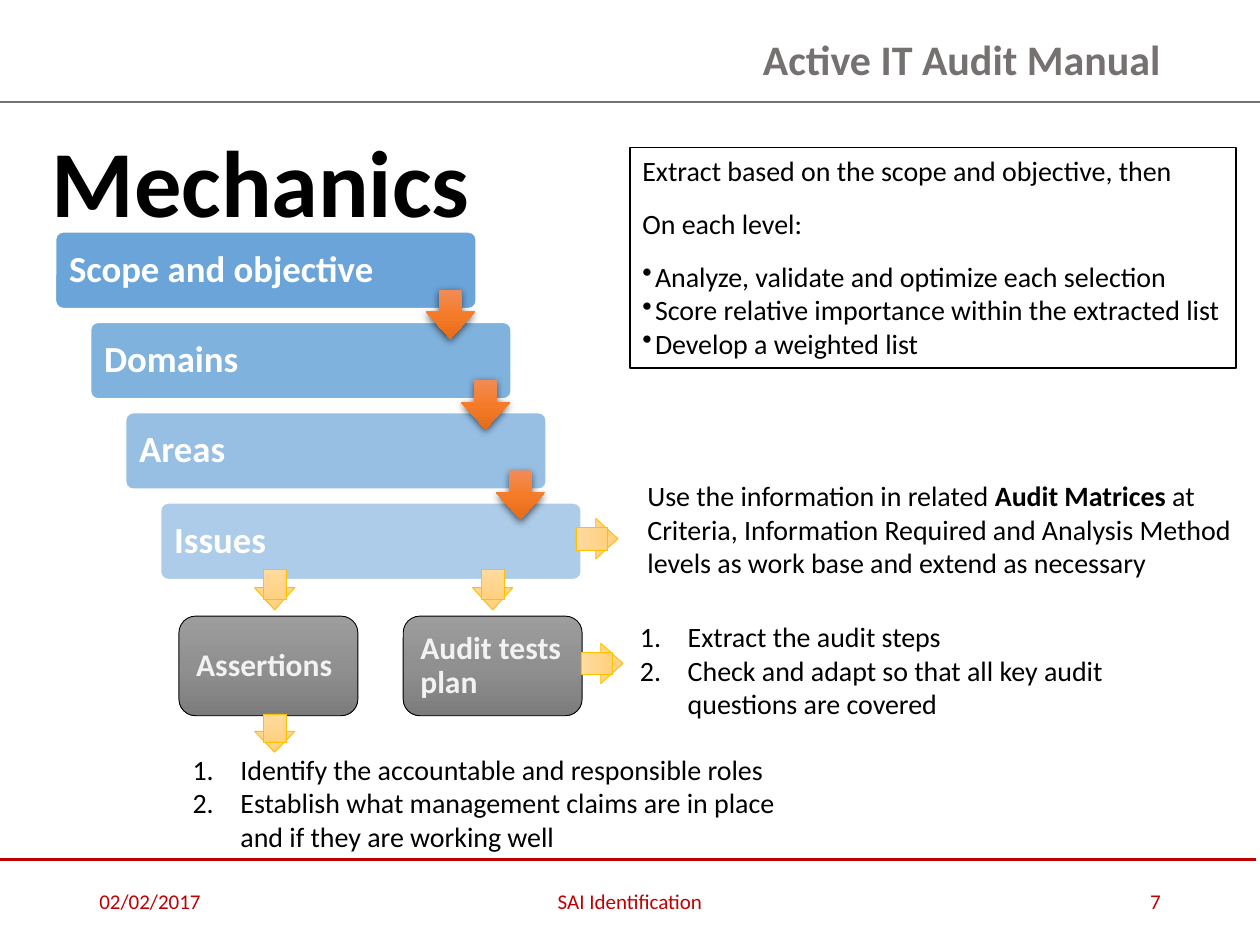
from lxml.etree import SubElement
from pptx import Presentation
from pptx.dml.color import RGBColor
from pptx.enum.shapes import MSO_CONNECTOR, MSO_SHAPE
from pptx.enum.text import MSO_ANCHOR, PP_ALIGN
from pptx.oxml.ns import qn
from pptx.util import Inches, Pt

COLUMNS, ROWS = 100, 75
SLIDE_WIDTH, SLIDE_HEIGHT = Inches(10), Inches(7.5)
FONT = "Calibri"
ORANGE = ("F18C57", "F67B28", "E56C19")
YELLOW = ("FFDB9E", "FFD590", "FFD07C")
GRAY = ("9D9D9D", "909090", "7C7C7C")


def color(value):
    """Turn a hex string into a colour."""
    return RGBColor.from_string(value)


def place(left, top, width, height):
    """Turn grid columns and rows into slide lengths."""
    column, row = SLIDE_WIDTH / COLUMNS, SLIDE_HEIGHT / ROWS
    return [round(n) for n in (left * column, top * row, width * column, height * row)]


def style_paragraph(paragraph, size, hex_color, bold=False, align=PP_ALIGN.LEFT,
                    spacing=None, before=None, bullet=None, indent=0):
    """Set the layout, bullet and font of a paragraph."""
    paragraph.alignment = align
    if spacing:
        paragraph.line_spacing = spacing
    if before:
        paragraph.space_before = Pt(before)
    if bullet:
        properties = paragraph._p.get_or_add_pPr()
        properties.set("marL", str(Inches(indent)))
        properties.set("indent", str(-Inches(indent)))
        if bullet == "1.":
            SubElement(properties, qn("a:buAutoNum"), type="arabicPeriod")
        else:
            SubElement(properties, qn("a:buChar"), char=bullet)
    font = paragraph.font
    font.name, font.size, font.bold = FONT, Pt(size), bold
    font.color.rgb = color(hex_color)


def write(shape, lines, size, hex_color, anchor=MSO_ANCHOR.TOP, wrap=True, **style):
    """Fill a shape with equally styled paragraphs."""
    frame = shape.text_frame
    frame.word_wrap, frame.vertical_anchor = wrap, anchor
    for number, line in enumerate(lines):
        paragraph = frame.add_paragraph() if number else frame.paragraphs[0]
        paragraph.text = line
        style_paragraph(paragraph, size, hex_color, **style)
    return frame


def add_text(slide, box, lines, size, hex_color="000000", **style):
    """Add a text box."""
    return write(slide.shapes.add_textbox(*place(*box)), lines, size, hex_color, **style)


def add_rule(slide, left, top, hex_color):
    """Add a line as wide as the slide."""
    x, y, width, _ = place(left, top, COLUMNS, 0)
    rule = slide.shapes.add_connector(MSO_CONNECTOR.STRAIGHT, x, y, x + width, y)
    rule.line.color.rgb = color(hex_color)
    rule.line.width = Pt(1.5)
    SubElement(rule._element.spPr, qn("a:effectLst"))


def add_shape(slide, kind, box, line=None, line_width=1, adjustments=()):
    """Add a preset shape without a shadow."""
    shape = slide.shapes.add_shape(kind, *place(*box))
    shape.shadow.inherit = False
    for number, value in enumerate(adjustments):
        shape.adjustments[number] = value
    if line:
        shape.line.color.rgb = color(line)
        shape.line.width = Pt(line_width)
    else:
        shape.line.fill.background()
    return shape


def fill_solid(shape, hex_color, opacity=100):
    """Fill a shape with one colour, see-through if asked."""
    shape.fill.solid()
    shape.fill.fore_color.rgb = color(hex_color)
    if opacity < 100:
        tint = shape._element.spPr.find(qn("a:solidFill"))[0]
        SubElement(tint, qn("a:alpha"), val=str(opacity * 1000))


def fill_gradient(shape, stops):
    """Fill a shape from top to bottom with evenly spaced stops."""
    properties = shape._element.spPr
    gradient = SubElement(properties, qn("a:gradFill"), rotWithShape="1")
    stop_list = SubElement(gradient, qn("a:gsLst"))
    for number, stop in enumerate(stops):
        position = 100000 * number // (len(stops) - 1)
        mark = SubElement(stop_list, qn("a:gs"), pos=str(position))
        SubElement(mark, qn("a:srgbClr"), val=stop)
    SubElement(gradient, qn("a:lin"), ang="5400000", scaled="0")
    properties.find(qn("a:prstGeom")).addnext(gradient)


def add_level(slide, left, top, name, opacity):
    """Add one bar of the staircase."""
    bar = add_shape(slide, MSO_SHAPE.ROUNDED_RECTANGLE, (left, top, 33.4, 6.1),
                    "FFFFFF", adjustments=[0.1])
    fill_solid(bar, "5B9BD5", opacity)
    frame = write(bar, [name], 21, "FFFFFF", MSO_ANCHOR.MIDDLE, bold=True, spacing=0.9)
    frame.margin_left = frame.margin_right = Inches(0.09)


def add_step_arrow(slide, left, top):
    """Add a shadowed arrow that leads to the next level."""
    arrow = add_shape(slide, MSO_SHAPE.DOWN_ARROW, (left, top, 3.9, 3.9),
                      adjustments=[0.45, 0.55])
    fill_gradient(arrow, ORANGE)
    effects = arrow._element.spPr.find(qn("a:effectLst"))
    shadow = SubElement(effects, qn("a:outerShdw"), blurRad=str(Pt(4.5)),
                        dist=str(Pt(1.5)), dir="5400000", rotWithShape="0")
    tint = SubElement(shadow, qn("a:srgbClr"), val="000000")
    SubElement(tint, qn("a:alpha"), val="63000")


def add_output_arrow(slide, left, top, height, rotation=0):
    """Add a yellow arrow with a box over its shaft."""
    width, shaft_width, shaft_height = 3.2, 1.8, 0.75 * height
    shaft_left, shaft_top = left + (width - shaft_width) / 2, top
    if rotation:
        shaft_left -= (height - shaft_height) / 2
        shaft_top += (height - shaft_height) / 2
    parts = [
        (MSO_SHAPE.DOWN_ARROW, (left, top, width, height), [0.45, 0.55]),
        (MSO_SHAPE.RECTANGLE, (shaft_left, shaft_top, shaft_width, shaft_height), []),
    ]
    for kind, box, adjustments in parts:
        part = add_shape(slide, kind, box, "FFC000", 0.5, adjustments)
        part.rotation = rotation
        fill_gradient(part, YELLOW)


def add_result(slide, left, name):
    """Add a gray result box."""
    box = add_shape(slide, MSO_SHAPE.ROUNDED_RECTANGLE, (left, 48.9, 14.2, 7.9),
                    "000000", 0.5)
    fill_gradient(box, GRAY)
    write(box, [name], 18, "F2F2F2", MSO_ANCHOR.MIDDLE, bold=True, spacing=0.9)


def add_frame(slide):
    """Add the header, the footer and their rules."""
    middle = MSO_ANCHOR.MIDDLE
    add_text(slide, (42.1, 1.7, 51, 6.4), ["Active IT Audit Manual"], 24, "767171",
             anchor=middle, bold=True, align=PP_ALIGN.RIGHT, spacing=0.9)
    add_rule(slide, 0, 8.1, "767171")
    add_rule(slide, -0.3, 68.2, "C00000")
    footers = [
        (6.9, 22.5, "02/02/2017", PP_ALIGN.LEFT),
        (33.1, 33.8, "SAI Identification", PP_ALIGN.CENTER),
        (70.6, 22.5, "7", PP_ALIGN.RIGHT),
    ]
    for left, width, text, align in footers:
        add_text(slide, (left, 69.5, width, 4), [text], 12, "C00000",
                 anchor=middle, align=align)


def add_staircase(slide):
    """Add the four levels and the arrows between them."""
    levels = [("Scope and objective", 90), ("Domains", 77), ("Areas", 63), ("Issues", 50)]
    steps = [(2.78 * number, 7.17 * number) for number in range(len(levels))]
    for (across, down), (name, opacity) in zip(steps, levels):
        add_level(slide, 4.4 + across, 18.4 + down, name, opacity)
    for across, down in steps[:-1]:
        add_step_arrow(slide, 33.8 + across, 23 + down)


def add_instructions(slide):
    """Add the bordered box on how to work at each level."""
    box = add_shape(slide, MSO_SHAPE.RECTANGLE, (50, 11.7, 48.1, 17.5), "000000")
    fill_solid(box, "FFFFFF")
    frame = write(box, ["Extract based on the scope and objective, then"], 16, "000000")
    points = [
        ("On each level:", {"before": 11}),
        ("Analyze, validate and optimize each selection", {"before": 11, "bullet": "•"}),
        ("Score relative importance within the extracted list", {"bullet": "•"}),
        ("Develop a weighted list", {"bullet": "•"}),
    ]
    for text, style in points:
        paragraph = frame.add_paragraph()
        paragraph.text = text
        style_paragraph(paragraph, 16, "000000", indent=0.1, **style)


def add_matrices_note(slide):
    """Add the note beside the issues level."""
    frame = add_text(slide, (50.4, 37.5, 49.6, 9.1), [""], 16)
    paragraph = frame.paragraphs[0]
    paragraph.add_run().text = "Use the information in related "
    term = paragraph.add_run()
    term.text, term.font.bold = "Audit Matrices", True
    paragraph.add_run().text = (" at Criteria, Information Required and Analysis Method "
                                "levels as work base and extend as necessary")


def main():
    """Build the slide and save it."""
    presentation = Presentation()
    presentation.slide_width, presentation.slide_height = SLIDE_WIDTH, SLIDE_HEIGHT
    slide = presentation.slides.add_slide(presentation.slide_layouts[6])
    add_frame(slide)
    add_text(slide, (3.1, 9.3, 35.5, 10.1), ["Mechanics"], 54, wrap=False, bold=True)
    add_staircase(slide)
    add_instructions(slide)
    add_result(slide, 14.2, "Assertions")
    add_result(slide, 32, "Audit tests plan")
    for left, top, height, rotation in [(20.2, 45.2, 3.2, 0), (37.5, 45.2, 3.2, 0),
                                        (20.2, 56.7, 3, 0), (46.2, 51, 3.3, 270),
                                        (45.8, 41.1, 3.3, 270)]:
        add_output_arrow(slide, left, top, height, rotation)
    numbered = {"bullet": "1.", "indent": 0.38}
    add_text(slide, (14.3, 59.2, 68.5, 9.1),
             ["Identify the accountable and responsible roles",
              "Establish what management claims are in place \vand if they are working well"],
             16, **numbered)
    add_text(slide, (49.8, 48.7, 42.1, 9.1),
             ["Extract the audit steps",
              "Check and adapt so that all key audit questions are covered"], 16, **numbered)
    add_matrices_note(slide)
    presentation.save("out.pptx")


if __name__ == "__main__":
    main()
